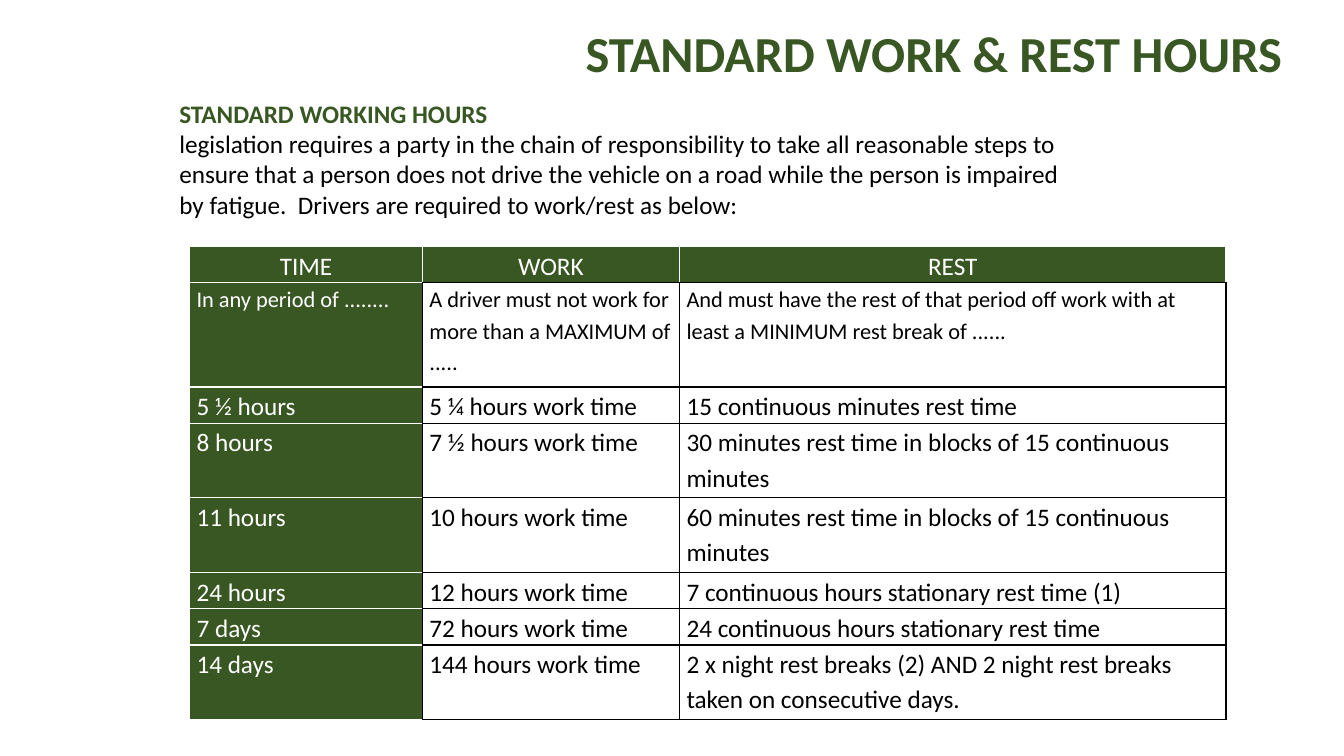
import dataclasses

import pptx
import pptx.dml.color
import pptx.enum.text
import pptx.oxml
import pptx.oxml.ns
import pptx.util

Inches = pptx.util.Inches
ALIGN = pptx.enum.text.PP_ALIGN
ANCHOR = pptx.enum.text.MSO_ANCHOR

GREEN = pptx.dml.color.RGBColor(0x38, 0x57, 0x23)
WHITE = pptx.dml.color.RGBColor(0xFF, 0xFF, 0xFF)
BLACK = pptx.dml.color.RGBColor(0x00, 0x00, 0x00)
FONT = "Calibri"
COLUMN_WIDTHS = (2.31, 2.55, 5.42)


@dataclasses.dataclass(frozen=True)
class HoursRow:
    time: str
    work: str
    rest: str
    height: float = 0.36
    size: int = 18


ROWS = (
    HoursRow("TIME", "WORK", "REST"),
    HoursRow(
        "In any period of ........",
        "A driver must not work for more than a MAXIMUM of .....",
        "And must have the rest of that period off work with at least a MINIMUM rest break of ......",
        height=1.04,
        size=16,
    ),
    HoursRow("5 ½ hours", "5 ¼ hours work time", "15 continuous minutes rest time"),
    HoursRow("8 hours", "7 ½ hours work time",
             "30 minutes rest time in blocks of 15 continuous minutes", height=0.74),
    HoursRow("11 hours", "10 hours work time",
             "60 minutes rest time in blocks of 15 continuous minutes", height=0.74),
    HoursRow("24 hours", "12 hours work time", "7 continuous hours stationary rest time (1)"),
    HoursRow("7 days", "72 hours work time", "24 continuous hours stationary rest time"),
    HoursRow("14 days", "144 hours work time",
             "2 x night rest breaks (2) AND 2 night rest breaks taken on consecutive days.",
             height=0.74),
)


def write_text(para, text: str, *, size: int = 18, color=BLACK, bold: bool = False,
               align=ALIGN.LEFT, spacing: float = 1.0) -> None:
    para.alignment = align
    para.line_spacing = spacing
    span = para.add_run()
    span.text = text
    span.font.name = FONT
    span.font.size = pptx.util.Pt(size)
    span.font.bold = bold
    span.font.color.rgb = color


def set_borders(cell, **colors) -> None:
    properties = cell._tc.get_or_add_tcPr()
    for side in "LRTB":
        properties.append(pptx.oxml.parse_xml(
            f'<a:ln{side} {pptx.oxml.ns.nsdecls("a")} w="{pptx.util.Pt(1)}">'
            f'<a:solidFill><a:srgbClr val="{colors[side]}"/></a:solidFill></a:ln{side}>'
        ))


def fill_cell(cell, text: str, size: int, is_header: bool, is_time: bool) -> None:
    is_green = is_header or is_time
    edge = WHITE if is_green else BLACK
    set_borders(
        cell,
        L=edge,
        T=edge,
        R=WHITE if is_header else BLACK,
        B=WHITE if is_time else BLACK,
    )
    cell.fill.solid()
    cell.fill.fore_color.rgb = GREEN if is_green else WHITE
    cell.margin_left = cell.margin_right = Inches(0.07)
    cell.margin_top = cell.margin_bottom = 0
    cell.vertical_anchor = ANCHOR.MIDDLE if is_header else ANCHOR.TOP
    write_text(
        cell.text_frame.paragraphs[0], text, size=size, spacing=1.15,
        color=WHITE if is_green else BLACK,
        align=ALIGN.CENTER if is_header else ALIGN.LEFT,
    )


def add_hours_table(page) -> None:
    table = page.shapes.add_table(
        len(ROWS), len(COLUMN_WIDTHS), Inches(1.88), Inches(2.44),
        Inches(sum(COLUMN_WIDTHS)), Inches(sum(row.height for row in ROWS)),
    ).table
    table.horz_banding = False
    for column, width in zip(table.columns, COLUMN_WIDTHS):
        column.width = Inches(width)
    for row_index, row in enumerate(ROWS):
        table.rows[row_index].height = Inches(row.height)
        for column_index, text in enumerate((row.time, row.work, row.rest)):
            fill_cell(table.cell(row_index, column_index), text, row.size,
                      row_index == 0, column_index == 0)


def add_introduction(page) -> None:
    box = page.shapes.add_textbox(Inches(1.68), Inches(0.92), Inches(9.21), Inches(1.26))
    frame = box.text_frame
    frame.word_wrap = True
    frame.auto_size = pptx.enum.text.MSO_AUTO_SIZE.SHAPE_TO_FIT_TEXT
    frame.vertical_anchor = ANCHOR.MIDDLE
    frame.margin_bottom = 0
    write_text(frame.paragraphs[0], "STANDARD WORKING HOURS", color=GREEN, bold=True)
    write_text(
        frame.add_paragraph(),
        "legislation requires a party in the chain of responsibility to take all reasonable "
        "steps to ensure that a person does not drive the vehicle on a road while the person "
        "is impaired by fatigue.  Drivers are required to work/rest as below:",
    )


def set_title(page) -> None:
    title = page.shapes.title
    title.left, title.top = Inches(5.54), Inches(0.17)
    title.width, title.height = Inches(7.28), Inches(0.71)
    frame = title.text_frame
    frame.word_wrap = True
    frame.auto_size = pptx.enum.text.MSO_AUTO_SIZE.SHAPE_TO_FIT_TEXT
    frame.vertical_anchor = ANCHOR.TOP
    write_text(frame.paragraphs[0], "STANDARD WORK & REST HOURS", size=36,
               color=GREEN, bold=True, align=ALIGN.RIGHT)


def main() -> None:
    deck = pptx.Presentation()
    deck.slide_width, deck.slide_height = Inches(13.33), Inches(7.5)
    page = deck.slides.add_slide(deck.slide_layouts[5])
    add_hours_table(page)
    add_introduction(page)
    set_title(page)
    deck.save("out.pptx")


if __name__ == "__main__":
    main()
